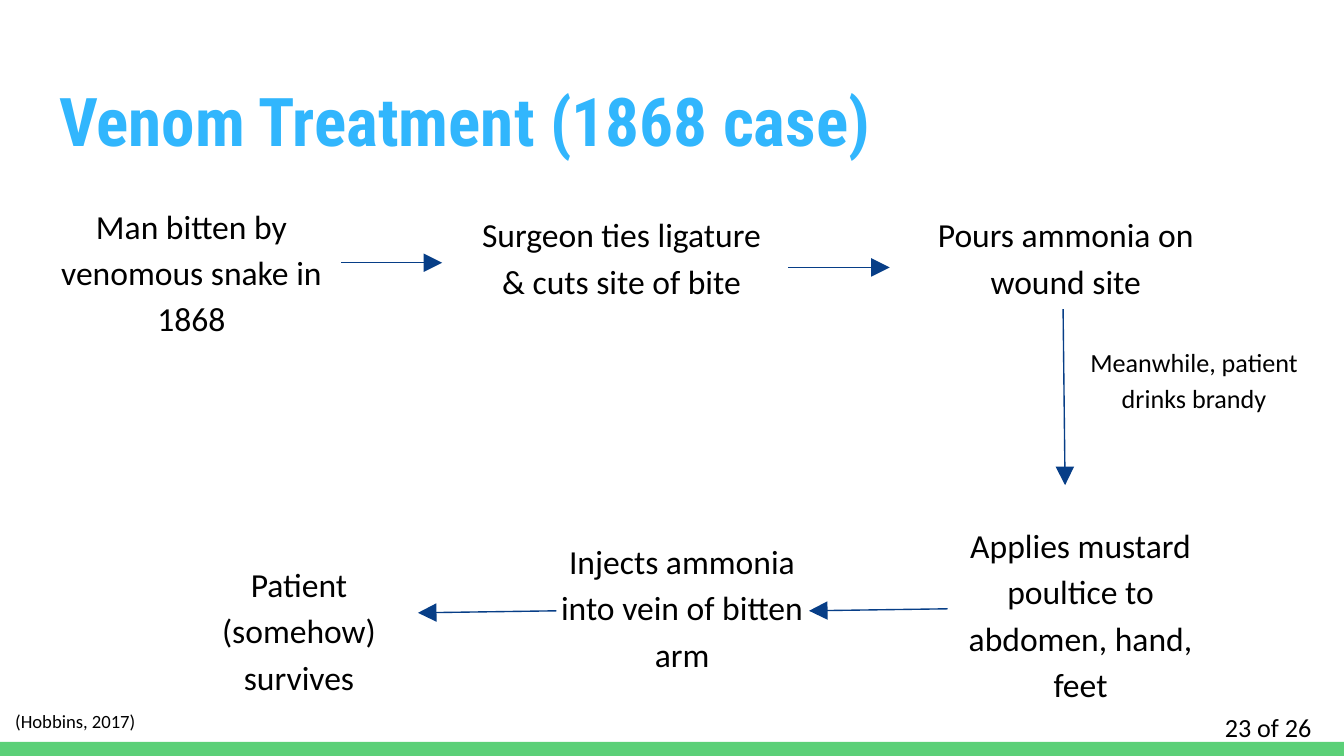
"""Build the slide that follows the 1868 snake bite treatment as a flow of steps."""
import pptx
import pptx.util
import pptx.dml.color
import pptx.enum.shapes
import pptx.enum.text
import pptx.oxml
import pptx.oxml.ns

PX = 4572
WIDTH, HEIGHT = 2000, 1125
COLORS = {"title": "31B6FD", "text": "000000", "arrow": "073E87", "bar": "5BD078"}
BODY_FONT = "Calibri"
TITLE = ("Venom Treatment (1868 case)", (68, 98, 1864, 154))
STEPS = [
    ("Man bitten by venomous snake in 1868", (55, 277, 460, 230), 18),
    ("Surgeon ties ligature & cuts site of bite", (685, 290, 480, 204), 18),
    ("Pours ammonia on wound site", (1346, 290, 480, 204), 18),
    ("Meanwhile, patient drinks brandy", (1599, 488, 356, 204), 14),
    ("Applies mustard poultice to abdomen, hand, feet", (1378, 752, 460, 204), 18),
    ("Injects ammonia into vein of bitten arm", (808, 776, 414, 204), 18),
    ("Patient (somehow) survives", (238, 810, 414, 204), 18),
]
ARROWS = [
    (508, 391, 658, 391),
    (1173, 398, 1324, 398),
    (1582, 460, 1585, 722),
    (1410, 906, 1204, 909),
    (828, 909, 622, 912),
]
FOOTERS = [
    ("(Hobbins, 2017)", (3, 1047, 222, 54), 10, False),
    ("23 of 26", (1803, 1049, 192, 68), 14, True),
]
BAR_HEIGHT = 21
BAR = (0, HEIGHT - BAR_HEIGHT, WIDTH, BAR_HEIGHT)


def emu(lengths):
    return [length * PX for length in lengths]


def rgb(name):
    return pptx.dml.color.RGBColor.from_string(COLORS[name])


def style_font(font, name, size, color, bold=False):
    font.name = name
    font.size = pptx.util.Pt(size)
    font.bold = bold
    font.color.rgb = rgb(color)


def set_frame(frame, inset_x, inset_y, wrap=True):
    frame.margin_left = frame.margin_right = inset_x * PX
    frame.margin_top = frame.margin_bottom = inset_y * PX
    frame.word_wrap = wrap
    frame.vertical_anchor = pptx.enum.text.MSO_ANCHOR.TOP


def add_bar(slide):
    bar = slide.shapes.add_shape(pptx.enum.shapes.MSO_SHAPE.RECTANGLE, *emu(BAR))
    bar.shadow.inherit = False
    bar.fill.solid()
    bar.fill.fore_color.rgb = rgb("bar")
    bar.line.fill.background()


def fill_title(slide):
    text, box = TITLE
    title = slide.shapes.title
    title.left, title.top, title.width, title.height = emu(box)
    frame = title.text_frame
    frame.text = text
    set_frame(frame, 20, 20)
    frame.auto_size = pptx.enum.text.MSO_AUTO_SIZE.NONE
    paragraph = frame.paragraphs[0]
    paragraph.alignment = pptx.enum.text.PP_ALIGN.LEFT
    style_font(paragraph.font, "Roboto Condensed", 36, "title", True)


def add_text(slide, text, box, size, inset_y, wrap=True):
    frame = slide.shapes.add_textbox(*emu(box)).text_frame
    frame.text = text
    set_frame(frame, 20, inset_y, wrap)
    paragraph = frame.paragraphs[0]
    style_font(paragraph.font, BODY_FONT, size, "text")
    return paragraph


def add_step(slide, text, box, size):
    paragraph = add_text(slide, text, box, size, 20)
    paragraph.alignment = pptx.enum.text.PP_ALIGN.CENTER
    paragraph.line_spacing = 1.15
    paragraph.space_after = pptx.util.Pt(16)


def add_arrow(slide, ends):
    arrow = slide.shapes.add_connector(pptx.enum.shapes.MSO_CONNECTOR.STRAIGHT, *emu(ends))
    arrow.line.color.rgb = rgb("arrow")
    arrow.line.width = pptx.util.Pt(0.75)
    namespace = pptx.oxml.ns.nsdecls("a")
    head = f'<a:tailEnd {namespace} type="triangle" w="lg" len="lg"/>'
    arrow.line._get_or_add_ln().append(pptx.oxml.parse_xml(head))
    arrow._element.spPr.append(pptx.oxml.parse_xml(f"<a:effectLst {namespace}/>"))


def main():
    presentation = pptx.Presentation()
    presentation.slide_width, presentation.slide_height = emu((WIDTH, HEIGHT))
    slide = presentation.slides.add_slide(presentation.slide_layouts.get_by_name("Title Only"))
    add_bar(slide)
    fill_title(slide)
    for text, box, size in STEPS:
        add_step(slide, text, box, size)
    for ends in ARROWS:
        add_arrow(slide, ends)
    for text, box, size, wrap in FOOTERS:
        add_text(slide, text, box, size, 10, wrap)
    presentation.save("out.pptx")


if __name__ == "__main__":
    main()
